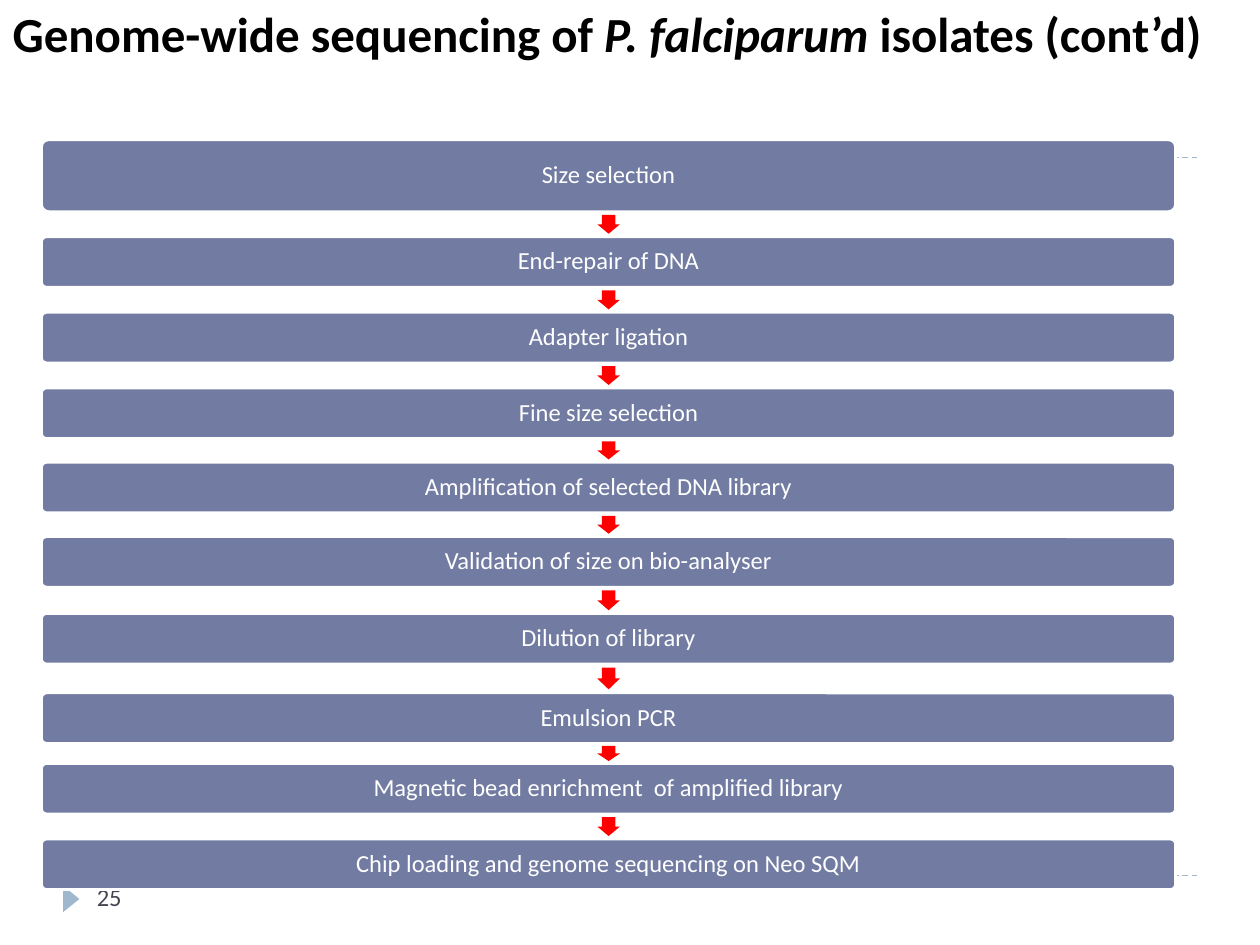
from lxml import etree
from pptx import Presentation
from pptx.dml.color import RGBColor
from pptx.enum.dml import MSO_LINE
from pptx.enum.shapes import MSO_CONNECTOR, MSO_SHAPE
from pptx.enum.text import MSO_ANCHOR, PP_ALIGN
from pptx.oxml.ns import qn
from pptx.util import Inches, Pt

BAR, ARROW = MSO_SHAPE.ROUNDED_RECTANGLE, MSO_SHAPE.RIGHT_ARROW
TRIANGLE = MSO_SHAPE.ISOSCELES_TRIANGLE
LEFT, CENTER = PP_ALIGN.LEFT, PP_ALIGN.CENTER
TOP, MIDDLE = MSO_ANCHOR.TOP, MSO_ANCHOR.MIDDLE

SLIDE_W, SLIDE_H = 10, 7.5
FONT = "Calibri"
SLATE, PALE_BLUE, RED = "727CA3", "9FB8CD", "FF0000"
WHITE, BLACK, DARK = "FFFFFF", "000000", "464653"

# (text, italic)
TITLE = [
    ("Genome-wide sequencing of ", False),
    ("P. falciparum ", True),
    ("isolates (cont’d)", False),
]
PAGE_NUMBER = "25"
# (step, top of its bar)
STEPS = [
    ("Size selection", 1.11),
    ("End-repair of DNA", 1.88),
    ("Adapter ligation", 2.48),
    ("Fine size selection", 3.08),
    ("Amplification of selected DNA library", 3.67),
    ("Validation of size on bio-analyser", 4.26),
    ("Dilution of library", 4.87),
    ("Emulsion PCR", 5.5),
    ("Magnetic bead enrichment  of amplified library", 6.06),
    ("Chip loading and genome sequencing on Neo SQM", 6.66),
]
BAR_LEFT, BAR_W = 0.33, 9
FIRST_BAR_H, BAR_H = 0.57, 0.4
ARROW_SHARE, ARROW_SPAN = 0.75, 0.18  # length as a share of the gap, width
RULE_MARGIN, RULE_TOPS = 0.05 * SLIDE_W, (1.25, 6.95)


def color(hex_code):
    return RGBColor.from_string(hex_code)


def write(frame, runs, size=14, ink=WHITE, bold=False, align=LEFT,
          anchor=TOP, insets=(0.1, 0.05), line_spacing=1.0):
    """Fill a text frame with one paragraph of (text, italic) runs."""
    frame.word_wrap = True
    frame.vertical_anchor = anchor
    frame.margin_left = frame.margin_right = Inches(insets[0])
    frame.margin_top = frame.margin_bottom = Inches(insets[1])
    paragraph = frame.paragraphs[0]
    paragraph.alignment = align
    paragraph.line_spacing = line_spacing
    for text, italic in runs:
        run = paragraph.add_run()
        run.text = text
        run.font.name, run.font.size = FONT, Pt(size)
        run.font.bold, run.font.italic = bold, italic
        run.font.color.rgb = color(ink)


def add_solid(slide, kind, box, fill, outline=None, rotation=0, adjust=()):
    solid = slide.shapes.add_shape(kind, *map(Inches, box))
    solid.shadow.inherit = False
    solid.rotation = rotation
    solid.fill.solid()
    solid.fill.fore_color.rgb = color(fill)
    if outline:
        solid.line.color.rgb = color(outline)
        solid.line.width = Pt(1.5)
    else:
        solid.line.fill.background()
    for index, value in enumerate(adjust):
        solid.adjustments[index] = value
    return solid


def add_rule(slide, top):
    rule = slide.shapes.add_connector(
        MSO_CONNECTOR.STRAIGHT, Inches(RULE_MARGIN), Inches(top),
        Inches(SLIDE_W - RULE_MARGIN), Inches(top))
    rule.line.color.rgb = color(PALE_BLUE)
    rule.line.width = Pt(0.75)
    rule.line.dash_style = MSO_LINE.DASH
    etree.SubElement(rule._element.spPr, qn("a:effectLst"))


def add_steps(slide):
    previous_bottom = None
    for step, top in STEPS:
        if previous_bottom is not None:
            length = ARROW_SHARE * (top - previous_bottom)
            center_x = BAR_LEFT + BAR_W / 2
            center_y = (previous_bottom + top) / 2
            add_solid(slide, ARROW,
                      (center_x - length / 2, center_y - ARROW_SPAN / 2,
                       length, ARROW_SPAN),
                      RED, rotation=90, adjust=(0.6, 0.5))
        height = FIRST_BAR_H if previous_bottom is None else BAR_H
        bar = add_solid(slide, BAR, (BAR_LEFT, top, BAR_W, height),
                        SLATE, outline=WHITE, adjust=(0.1,))
        write(bar.text_frame, [(step, False)], align=CENTER, anchor=MIDDLE,
              insets=(0.06, 0.06), line_spacing=0.9)
        previous_bottom = top + height


def main():
    deck = Presentation()
    deck.slide_width, deck.slide_height = Inches(SLIDE_W), Inches(SLIDE_H)
    slide = deck.slides.add_slide(deck.slide_layouts[5])

    title = slide.shapes.title
    title.left, title.top = Inches(0), Inches(-0.02)
    title.width, title.height = Inches(10.21), Inches(1.04)
    write(title.text_frame, TITLE, size=28, ink=BLACK, bold=True)

    for top in RULE_TOPS:
        add_rule(slide, top)
    add_solid(slide, TRIANGLE, (0.46, 7.07, 0.21, 0.13), PALE_BLUE, rotation=90)
    page = slide.shapes.add_textbox(*map(Inches, (0.67, 6.95, 2.17, 0.4)))
    write(page.text_frame, [(PAGE_NUMBER, False)], ink=DARK)

    add_steps(slide)
    deck.save("out.pptx")


if __name__ == "__main__":
    main()
